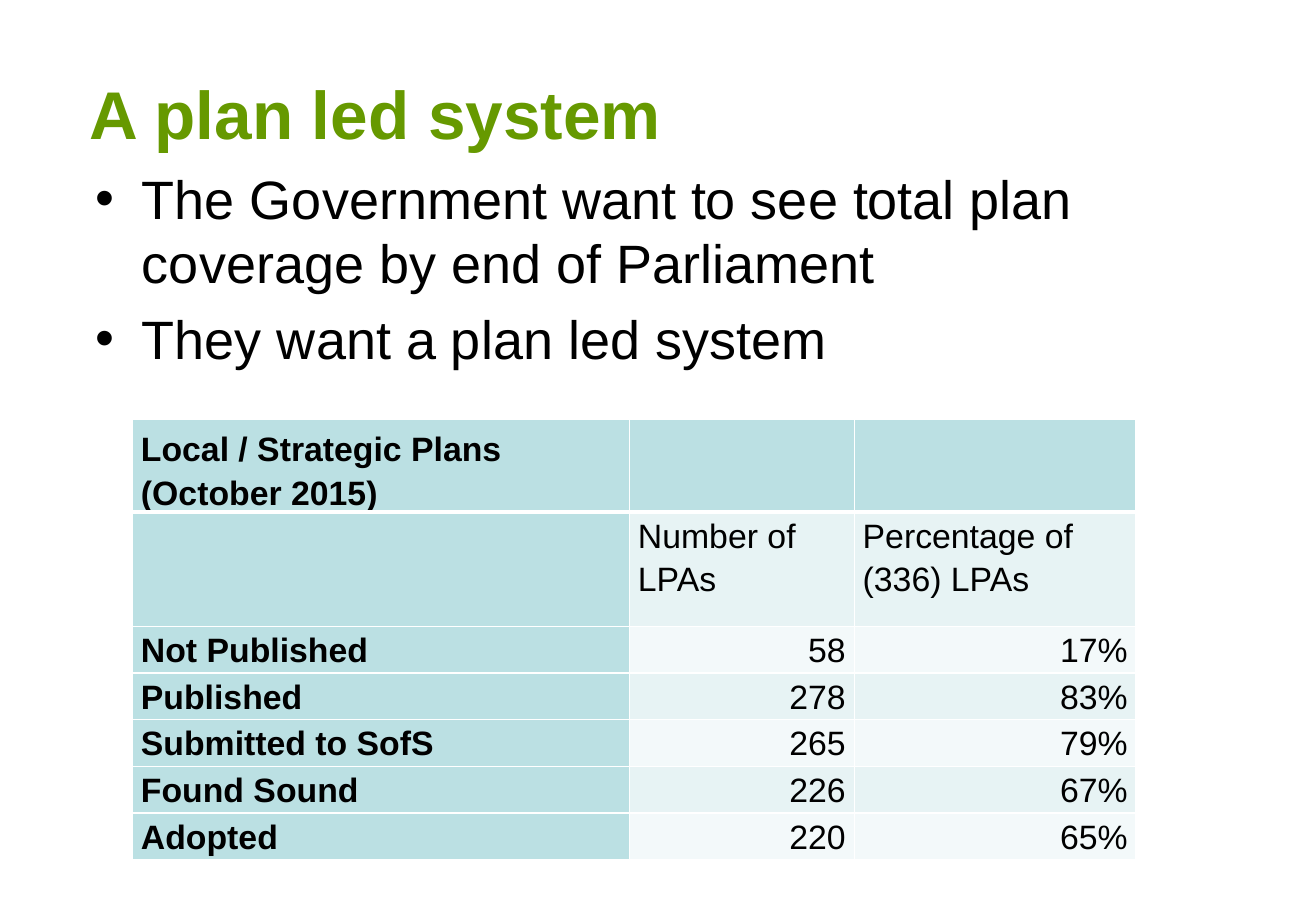
from dataclasses import dataclass

from lxml import etree
from pptx import Presentation
from pptx.dml.color import RGBColor
from pptx.enum.text import MSO_ANCHOR, PP_ALIGN
from pptx.oxml.ns import qn
from pptx.util import Inches, Pt

MIDDLE, BOTTOM, TOP = MSO_ANCHOR.MIDDLE, MSO_ANCHOR.BOTTOM, MSO_ANCHOR.TOP
LEFT, RIGHT = PP_ALIGN.LEFT, PP_ALIGN.RIGHT


@dataclass(frozen=True)
class Theme:
    font: str = "Arial"
    title_color: str = "669900"
    text_color: str = "000000"
    label_fill: str = "BBE0E3"
    band_fills: tuple = ("F3F9FA", "E7F3F4")
    border_color: str = "FFFFFF"
    title_size: int = 40
    bullet_size: int = 32
    table_size: int = 20
    border_width: int = 1
    header_rule: int = 3


THEME = Theme()

BULLETS = [
    "The Government want to see total plan coverage by end of Parliament",
    "They want a plan led system",
]
PLAN_ROWS = [
    ("Local / Strategic Plans (October 2015)", "", ""),
    ("", "Number of LPAs", "Percentage of (336) LPAs"),
    ("Not Published", "58", "17%"),
    ("Published", "278", "83%"),
    ("Submitted to SofS", "265", "79%"),
    ("Found Sound", "226", "67%"),
    ("Adopted", "220", "65%"),
]
COLUMN_WIDTHS = (4.09, 1.85, 2.32)
ROW_HEIGHTS = (0.62, 0.94) + (0.35,) * 5


def style_runs(paragraph, size, color=THEME.text_color, bold=False):
    for run in paragraph.runs:
        run.font.name = THEME.font
        run.font.size = Pt(size)
        run.font.bold = bold
        run.font.color.rgb = RGBColor.from_string(color)


def add_text_frame(slide, left, top, width, height, anchor):
    box = slide.shapes.add_textbox(
        Inches(left), Inches(top), Inches(width), Inches(height))
    frame = box.text_frame
    frame.word_wrap = True
    frame.vertical_anchor = anchor
    return frame


def add_title(slide, text):
    frame = add_text_frame(slide, 0.64, 0.3, 9.75, 1.25, MIDDLE)
    frame.text = text
    style_runs(frame.paragraphs[0], THEME.title_size, THEME.title_color, bold=True)


def add_bullets(slide, items):
    frame = add_text_frame(slide, 0.69, 1.31, 9.82, 5.07, TOP)
    frame.text = "\n".join(items)
    for paragraph in frame.paragraphs:
        paragraph.space_before = Pt(0.2 * THEME.bullet_size)
        style_runs(paragraph, THEME.bullet_size)
        # Hanging indent and bullet character
        properties = paragraph._p.get_or_add_pPr()
        properties.set("marL", str(Inches(0.38)))
        properties.set("indent", str(Inches(-0.38)))
        etree.SubElement(properties, qn("a:buFont"), typeface=THEME.font)
        etree.SubElement(properties, qn("a:buChar"), char="•")


def set_borders(cell, row):
    widths = {
        "a:lnL": THEME.border_width,
        "a:lnR": THEME.border_width,
        "a:lnT": THEME.header_rule if row == 1 else THEME.border_width,
        "a:lnB": THEME.header_rule if row == 0 else THEME.border_width,
    }
    properties = cell._tc.get_or_add_tcPr()
    for side, width in widths.items():
        line = etree.SubElement(properties, qn(side), w=str(Pt(width)))
        fill = etree.SubElement(line, qn("a:solidFill"))
        etree.SubElement(fill, qn("a:srgbClr"), val=THEME.border_color)


def fill_cell(cell, text, row, column):
    is_label = row == 0 or column == 0
    set_borders(cell, row)
    cell.fill.solid()
    cell.fill.fore_color.rgb = RGBColor.from_string(
        THEME.label_fill if is_label else THEME.band_fills[row % 2])
    cell.margin_left = cell.margin_right = Inches(0.07)
    cell.margin_top = cell.margin_bottom = 0
    cell.vertical_anchor = BOTTOM if row == 0 else TOP
    cell.text = text
    paragraph = cell.text_frame.paragraphs[0]
    paragraph.line_spacing = 1.15
    paragraph.alignment = RIGHT if row > 1 and column > 0 else LEFT
    style_runs(paragraph, THEME.table_size, bold=is_label)


def add_plan_table(slide, rows):
    table = slide.shapes.add_table(
        len(rows), len(COLUMN_WIDTHS), Inches(1.09), Inches(3.45),
        Inches(sum(COLUMN_WIDTHS)), Inches(sum(ROW_HEIGHTS))).table
    for column, width in zip(table.columns, COLUMN_WIDTHS):
        column.width = Inches(width)
    for row, height in zip(table.rows, ROW_HEIGHTS):
        row.height = Inches(height)
    for r, values in enumerate(rows):
        for c, value in enumerate(values):
            fill_cell(table.cell(r, c), value, r, c)


def main():
    deck = Presentation()
    deck.slide_width, deck.slide_height = Inches(10.83), Inches(7.5)
    slide = deck.slides.add_slide(deck.slide_layouts[6])

    # Heading and key points
    add_title(slide, "A plan led system")
    add_bullets(slide, BULLETS)

    # Plan progress figures
    add_plan_table(slide, PLAN_ROWS)

    deck.save("out.pptx")


if __name__ == "__main__":
    main()
